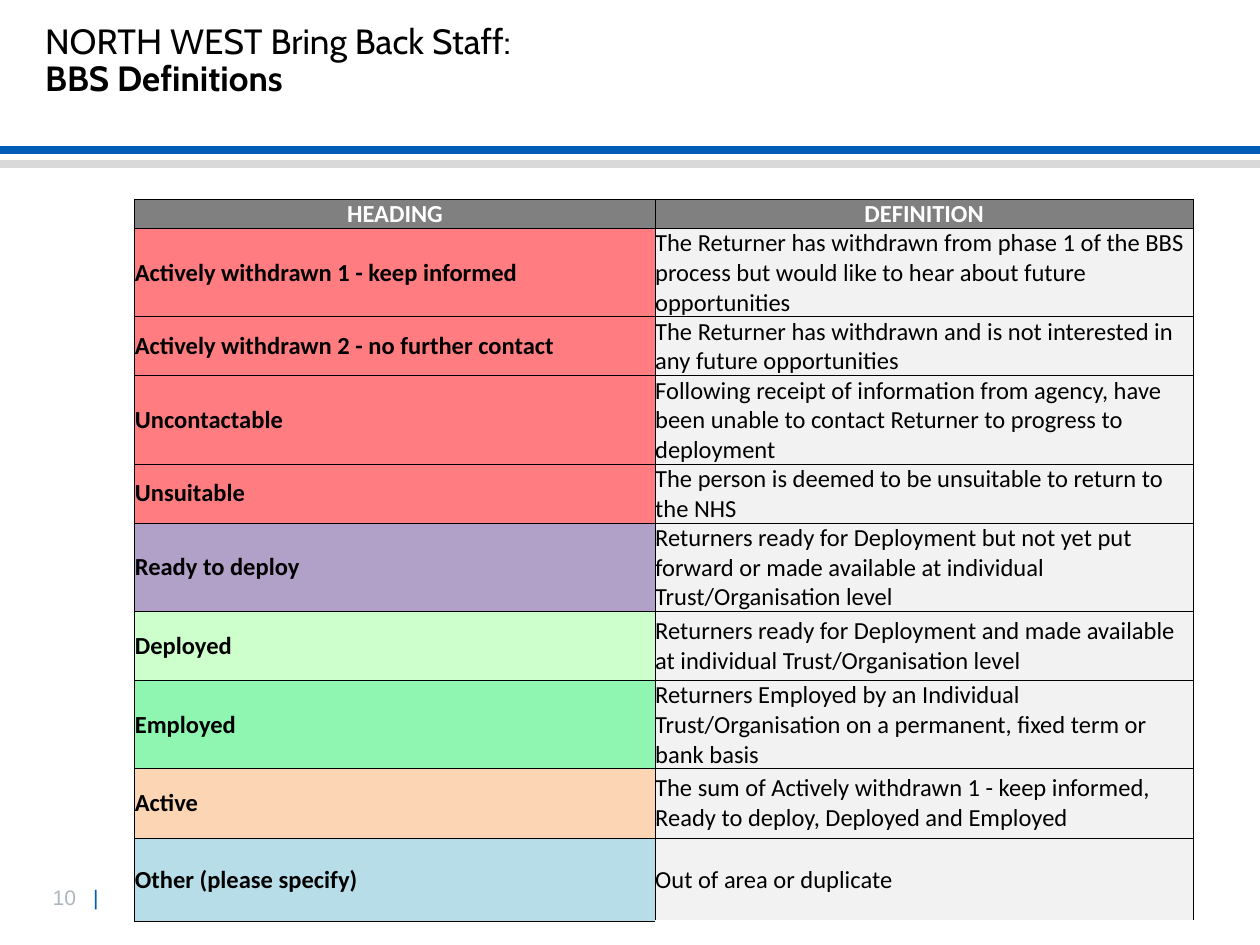
from pptx import Presentation
from pptx.dml.color import RGBColor as Rgb
from pptx.enum.shapes import MSO_CONNECTOR as Link
from pptx.enum.text import MSO_ANCHOR as Anchor, PP_ALIGN as Align
from pptx.oxml.ns import qn
from pptx.util import Inches, Pt
from lxml.etree import SubElement as Sub

HUES = {
    "black": "000000", "white": "FFFFFF", "blue": "005EB8", "rule": "D9D9D9",
    "page": "ADB6BE", "head": "808080", "body": "F2F2F2", "red": "FF7C80",
    "purple": "B1A0C7", "lime": "CCFFCC", "green": "8EF6B1",
    "peach": "FCD5B4", "sky": "B7DEE8",
}

ROWS = [
    (0.17, "head", "HEADING", "DEFINITION"),
    (0.55, "red", "Actively withdrawn 1 - keep informed",
     "The Returner has withdrawn from phase 1 of the BBS process but would like to hear about future opportunities"),
    (0.41, "red", "Actively withdrawn 2 - no further contact",
     "The Returner has withdrawn and is not interested in any future opportunities"),
    (0.69, "red", "Uncontactable",
     "Following receipt of information from agency, have been unable to contact Returner to progress to deployment"),
    (0.41, "red", "Unsuitable",
     "The person is deemed to be unsuitable to return to the NHS"),
    (0.69, "purple", "Ready to deploy",
     "Returners ready for Deployment but not yet put forward or made available at individual Trust/Organisation level"),
    (0.55, "lime", "Deployed",
     "Returners ready for Deployment and made available at individual Trust/Organisation level"),
    (0.55, "green", "Employed",
     "Returners Employed by an Individual Trust/Organisation on a permanent, fixed term or bank basis"),
    (0.55, "peach", "Active",
     "The sum of Actively withdrawn 1 - keep informed, Ready to deploy, Deployed and Employed"),
    (0.66, "sky", "Other (please specify)", "Out of area or duplicate"),
]


class Deck:
    """Holds the style and the current slide."""

    def __init__(self, wide, high):
        self.file = Presentation()
        self.file.slide_width = Inches(wide)
        self.file.slide_height = Inches(high)
        self.slide = self.file.slides.add_slide(self.file.slide_layouts[6])
        self.edge = 0.5

    def hue(self, name):
        return Rgb.from_string(HUES[name])

    def run(self, para, text, hue, **style):
        run = para.add_run()
        run.text = text
        for key, value in style.items():
            setattr(run.font, key, value)
        run.font.color.rgb = self.hue(hue)

    def text(self, x, y, w, h):
        box = self.slide.shapes.add_textbox(*map(Inches, (x, y, w, h)))
        box.text_frame.word_wrap = True
        return box.text_frame.paragraphs[0]

    def title(self, first, second):
        para = self.text(0.26, 0.14, 8.14, 0.81)
        para.line_spacing = 0.9
        style = {"name": "Cabin", "size": Pt(20)}
        self.run(para, first, "black", **style)
        para.add_line_break()
        self.run(para, second, "black", bold=True, **style)

    def page(self, number):
        para = self.text(0.32, 6.97, 0.71, 0.3)
        tabs = Sub(para._p.get_or_add_pPr(), qn("a:tabLst"))
        Sub(tabs, qn("a:tab"), pos=str(Inches(0.32)), algn="l")
        style = {"name": "Arial", "size": Pt(12)}
        self.run(para, number, "page", **style)
        self.run(para, "\t|", "blue", **style)

    def rule(self, y, hue):
        ends = map(Inches, (-0.01, y, 10, y))
        line = self.slide.shapes.add_connector(Link.STRAIGHT, *ends)
        line.line.width = Pt(4.5)
        line.line.color.rgb = self.hue(hue)
        Sub(line._element.spPr, qn("a:effectLst"))

    def border(self, cell, sides):
        for side in sides:
            line = Sub(cell._tc.get_or_add_tcPr(), qn(f"a:ln{side}"), w=str(Pt(self.edge)))
            Sub(Sub(line, qn("a:solidFill")), qn("a:srgbClr"), val=HUES["black"])

    def cell(self, cell, text, fill, hue, bold, align, sides):
        form = {"vertical_anchor": Anchor.MIDDLE}
        form |= {f"margin_{side}": 0 for side in ("left", "right", "top", "bottom")}
        for key, value in form.items():
            setattr(cell, key, value)
        self.border(cell, sides)
        cell.fill.solid()
        cell.fill.fore_color.rgb = self.hue(fill)
        para = cell.text_frame.paragraphs[0]
        para.alignment = align
        self.run(para, text, hue, name="Calibri", size=Pt(14), bold=bold)

    def table(self, x, y, cols, rows):
        high = sum(row[0] for row in rows)
        area = map(Inches, (x, y, sum(cols), high))
        grid = self.slide.shapes.add_table(len(rows), len(cols), *area).table
        for col, width in zip(grid.columns, cols):
            col.width = Inches(width)
        for r, (height, fill, *words) in enumerate(rows):
            grid.rows[r].height = Inches(height)
            head = r == 0
            for c, text in enumerate(words):
                label = head or c == 0
                last = r == len(rows) - 1 and c == len(cols) - 1
                self.cell(
                    grid.cell(r, c), text,
                    fill if label else "body",
                    "white" if head else "black", label,
                    Align.CENTER if head else Align.LEFT,
                    "LRT" if last else "LRTB",
                )


def main():
    deck = Deck(10, 7.5)
    deck.page("10")
    deck.rule(1.19, "blue")
    deck.rule(1.3, "rule")
    deck.title("NORTH WEST Bring Back Staff:", "BBS Definitions")
    deck.table(1.07, 1.58, (4.13, 4.27), ROWS)
    deck.file.save("out.pptx")


if __name__ == "__main__":
    main()
